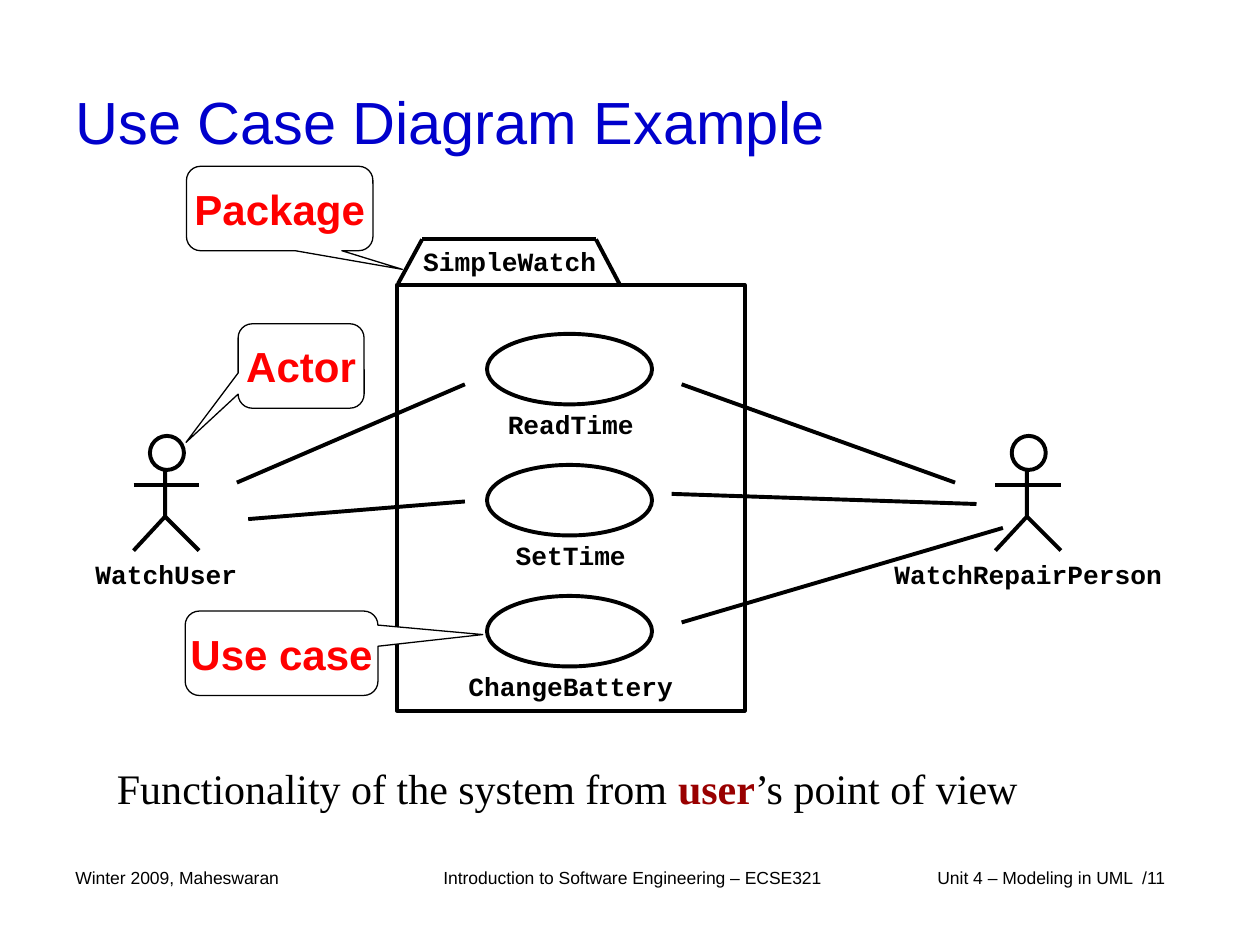
from lxml import etree
from pptx import Presentation
from pptx import util as u
from pptx.dml.color import RGBColor
from pptx.enum import shapes, text
from pptx.oxml.ns import qn

BLACK = RGBColor(0, 0, 0)
WHITE = RGBColor(255, 255, 255)
BLUE = RGBColor(0, 0, 0xCC)
RED = RGBColor(255, 0, 0)
MAROON = RGBColor(0x99, 0, 0)

SMALL = dict(name="Arial", size=u.Pt(10), bold=False, color=BLACK)
HEADING = dict(name="Arial", size=u.Pt(34), bold=False, color=BLUE)
CODE = dict(name="Courier New", size=u.Pt(15), bold=True, color=BLACK)
NOTE = dict(name="Arial", size=u.Pt(24), bold=True, color=RED)
BODY = dict(name="Times New Roman", size=u.Pt(24), bold=False, color=BLACK)
STRONG = dict(BODY, bold=True, color=MAROON)

TITLE = "Use Case Diagram Example"
FOOTERS = [
    ("Winter 2009, Maheswaran", 0.5, 2.33, 0.1),
    ("Introduction to Software Engineering – ECSE321", 3.42, 3.33, 0.1),
    ("Unit 4 – Modeling in UML  /11", 7, 2.5, 0.44),
]
SUMMARY = [("Functionality of the system from ", BODY), ("user", STRONG), ("’s point of view", BODY)]
ACTORS = [("WatchUser", 1.31), ("WatchRepairPerson", 8.15)]
USE_CASES = ["ReadTime", "SetTime", "ChangeBattery"]
ASSOCIATIONS = [
    (1.88, 3.83, 3.69, 3.05),
    (1.97, 4.12, 3.69, 3.98),
    (5.41, 4.94, 7.96, 4.19),
    (5.41, 3.05, 7.58, 3.83),
    (5.33, 3.92, 7.75, 4),
]
CALLOUTS = [
    ("Actor", (1.89, 2.57, 1, 0.67), (-0.913, 0.904)),
    ("Use case", (1.47, 4.85, 1.53, 0.67), (1.044, -0.221)),
    ("Package", (1.48, 1.32, 1.48, 0.67), (0.658, 0.721)),
]
PACKAGE = (3.15, 2.26, 2.76, 3.38)
TAB = [(3.16, 2.25), (3.35, 1.9), (4.73, 1.9), (4.92, 2.26)]
CASE_CENTER, CASE_TOP, CASE_STEP = 4.52, 2.65, 1.04
CASE_WIDTH, CASE_HEIGHT = 1.31, 0.56
CHARACTER = 0.125
HEAD_TOP, HEAD_SIZE = 3.46, 0.27
NECK, ARMS, HIP, FEET = 3.65, 3.85, 4.1, 4.37
REACH_LEFT, REACH_RIGHT = 0.25, 0.27


def inches(values):
    return [u.Inches(value) for value in values]


def write(frame, runs, align=text.PP_ALIGN.LEFT):
    paragraph = frame.paragraphs[0]
    paragraph.alignment = align
    for words, style in runs:
        run = paragraph.add_run()
        run.text = words
        for key, value in style.items():
            if key == "color":
                run.font.color.rgb = value
            else:
                setattr(run.font, key, value)


def add_text(parent, runs, box, **frame_format):
    frame = parent.add_textbox(*inches(box)).text_frame
    for key, value in {"word_wrap": True, **frame_format}.items():
        setattr(frame, key, value)
    write(frame, runs)


def add_label(parent, words, center, top):
    width = CHARACTER * len(words)
    add_text(parent, [(words, CODE)], (center - width / 2, top, width, 0.25),
             word_wrap=False, margin_left=0, margin_top=0, margin_right=0, margin_bottom=0)


def outline(shape, width=2.25):
    shape.line.color.rgb = BLACK
    shape.line.width = u.Pt(width)


def add_line(parent, *ends):
    line = parent.add_connector(shapes.MSO_CONNECTOR.STRAIGHT, *inches(ends))
    outline(line)
    etree.SubElement(line.element.spPr, qn("a:effectLst"))


def add_shape(parent, kind, box, fill=None, width=2.25):
    shape = parent.add_shape(kind, *inches(box))
    shape.shadow.inherit = False
    if fill is None:
        shape.fill.background()
    else:
        shape.fill.solid()
        shape.fill.fore_color.rgb = fill
    outline(shape, width)
    return shape


def add_actor(parent, name, axis):
    figure = parent.add_group_shape().shapes
    left, right = axis - REACH_LEFT, axis + REACH_RIGHT
    builder = figure.build_freeform(u.Inches(axis), u.Inches(NECK))
    builder.add_line_segments([inches((axis, HIP)), inches((left, FEET))], close=False)
    body = builder.convert_to_shape()
    body.shadow.inherit = False
    body.fill.background()
    outline(body)
    add_line(figure, axis, HIP, right, FEET)
    add_line(figure, left, ARMS, right, ARMS)
    add_shape(figure, shapes.MSO_SHAPE.OVAL, (axis - 0.12, HEAD_TOP, HEAD_SIZE, HEAD_SIZE), WHITE)
    add_label(parent, name, axis + 0.01, 4.43)


def main():
    presentation = Presentation()
    presentation.slide_width, presentation.slide_height = inches((10, 7.5))
    slide = presentation.slides.add_slide(presentation.slide_layouts[5])
    canvas = slide.shapes

    title = canvas.title
    title.left, title.top, title.width, title.height = inches((0.5, 0.33, 9, 1.25))
    title.text_frame.auto_size = text.MSO_AUTO_SIZE.NONE
    title.text_frame.vertical_anchor = text.MSO_ANCHOR.MIDDLE
    write(title.text_frame, [(TITLE, HEADING)])

    for words, left, width, margin in FOOTERS:
        add_text(canvas, [(words, SMALL)], (left, 6.83, width, 0.5), margin_left=u.Inches(margin))
    for name, axis in ACTORS:
        add_actor(canvas, name, axis)

    add_shape(canvas, shapes.MSO_SHAPE.RECTANGLE, PACKAGE)
    for row, name in enumerate(USE_CASES):
        top = CASE_TOP + row * CASE_STEP
        add_shape(canvas, shapes.MSO_SHAPE.OVAL,
                  (CASE_CENTER - CASE_WIDTH / 2, top, CASE_WIDTH, CASE_HEIGHT))
        add_label(canvas, name, CASE_CENTER + 0.01, top + 0.59)
    for ends in ASSOCIATIONS:
        add_line(canvas, *ends)

    for words, box, tip in CALLOUTS:
        callout = add_shape(canvas, shapes.MSO_SHAPE.ROUNDED_RECTANGULAR_CALLOUT, box, WHITE, 0.75)
        for index, value in enumerate((*tip, 0.167)):
            callout.adjustments[index] = value
        callout.text_frame.word_wrap = False
        callout.text_frame.vertical_anchor = text.MSO_ANCHOR.MIDDLE
        write(callout.text_frame, [(words, NOTE)], text.PP_ALIGN.CENTER)

    add_text(canvas, [("SimpleWatch", CODE)], (3.26, 1.9, 1.58, 0.35), word_wrap=False)
    for start, end in zip(TAB, TAB[1:]):
        add_line(canvas, *start, *end)
    add_text(canvas, SUMMARY, (0.83, 6, 8.07, 0.5))
    presentation.save("out.pptx")


if __name__ == "__main__":
    main()
